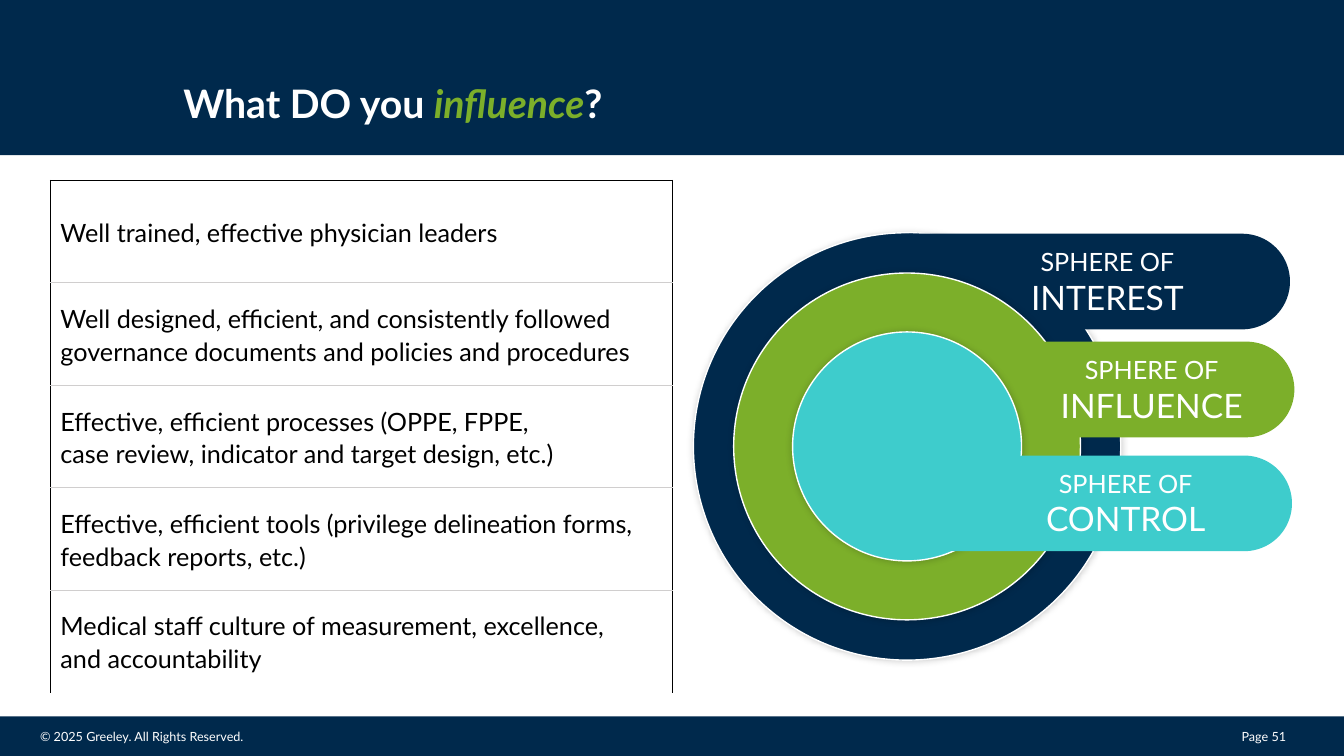
from lxml.etree import SubElement
from pptx import Presentation
from pptx.dml.color import RGBColor
from pptx.enum.shapes import MSO_SHAPE
from pptx.enum.text import MSO_ANCHOR, PP_ALIGN
from pptx.oxml import parse_xml
from pptx.oxml.ns import nsdecls, qn
from pptx.util import Cm, Pt

NAVY, GREEN, TEAL = "00294C", "7CAF2A", "3ECCCC"
WHITE, BLACK, GREY = "FFFFFF", "000000", "D0CECE"
FONT = "Lato"
WIDTH, HEIGHT = 33.87, 19.05

TITLE = [
    ("What DO you ", WHITE, False),
    ("influence", GREEN, True),
    ("?", WHITE, False),
]
FOOTERS = [
    ("© 2025 Greeley. All Rights Reserved.", 0.76, 11.38),
    ("Page 51", 31.04, 2.67),
]
EXAMPLES = [
    "Well trained, effective physician leaders",
    "Well designed, efficient, and consistently followed governance documents and policies and procedures",
    "Effective, efficient processes (OPPE, FPPE, \vcase review, indicator and target design, etc.)",
    "Effective, efficient tools (privilege delineation forms, feedback reports, etc.)",
    "Medical staff culture of measurement, excellence, \vand accountability",
]
SPHERES = [
    ("INTEREST", NAVY, 10.77, (21.74, 5.89, 10.77), 1.57),
    ("INFLUENCE", GREEN, 8.74, (24.16, 8.61, 8.46), 1.27),
    ("CONTROL", TEAL, 5.77, (22.91, 11.48, 9.65), 1.27),
]
CENTER_X, CENTER_Y = 22.86, 11.25
PILL_HEIGHT = 2.41
TABLE_BOX = (1.27, 4.55, 15.67, 12.9)


def color(value):
    return RGBColor.from_string(value)


def set_all(target, values):
    for name, value in values.items():
        setattr(target, name, value)


def format_run(run, size, fill, **extra):
    set_all(run.font, {"name": FONT, "size": Pt(size), **extra})
    run.font.color.rgb = color(fill)


def add_run(paragraph, text, size, fill, **extra):
    run = paragraph.add_run()
    run.text = text
    format_run(run, size, fill, **extra)


def add_block(slide, kind, box, fill, line=None):
    shape = slide.shapes.add_shape(kind, *map(Cm, box))
    shape.shadow.inherit = False
    shape.fill.solid()
    shape.fill.fore_color.rgb = color(fill)
    if line:
        shape.line.color.rgb = color(line)
        shape.line.width = Pt(1)
    else:
        shape.line.fill.background()
    return shape


def add_text_box(slide, box, **frame_format):
    frame = slide.shapes.add_textbox(*map(Cm, box)).text_frame
    set_all(frame, {"word_wrap": True, **frame_format})
    return frame.paragraphs[0]


def add_glow_shadow(shape):
    effects = shape._element.spPr.find(qn("a:effectLst"))
    shadow = SubElement(effects, qn("a:outerShdw"), blurRad=str(Pt(5)), dist="0", dir="0")
    tone = SubElement(shadow, qn("a:srgbClr"), val=BLACK)
    SubElement(tone, qn("a:alpha"), val="20000")


def set_borders(cell, borders):
    properties = cell._tc.get_or_add_tcPr()
    for index, (side, border) in enumerate(borders.items()):
        fill, width = border or (None, 0)
        paint = f'<a:solidFill><a:srgbClr val="{fill}"/></a:solidFill>' if fill else "<a:noFill/>"
        xml = f'<a:ln{side} {nsdecls("a")} w="{Pt(width)}">{paint}</a:ln{side}>'
        properties.insert(index, parse_xml(xml))


def add_sphere(slide, name, fill, diameter, pill_place, indent):
    corner = (CENTER_X - diameter / 2, CENTER_Y - diameter / 2)
    circle = add_block(slide, MSO_SHAPE.OVAL, (*corner, diameter, diameter), fill, WHITE)
    add_glow_shadow(circle)
    pill = add_block(slide, MSO_SHAPE.ROUNDED_RECTANGLE, (*pill_place, PILL_HEIGHT), fill)
    pill.adjustments[0] = 0.5
    frame = pill.text_frame
    set_all(frame, {"word_wrap": True, "vertical_anchor": MSO_ANCHOR.MIDDLE})
    for paragraph, text, size in (
        (frame.paragraphs[0], "SPHERE OF", 18),
        (frame.add_paragraph(), name, 24),
    ):
        paragraph.alignment = PP_ALIGN.CENTER
        paragraph._p.get_or_add_pPr().set("marL", str(Cm(indent)))
        add_run(paragraph, text, size, WHITE)


def add_examples(slide):
    table = slide.shapes.add_table(len(EXAMPLES), 1, *map(Cm, TABLE_BOX)).table
    set_all(table, {"first_row": False, "horz_banding": False})
    last = len(EXAMPLES) - 1
    outer, inner = (BLACK, 1), (GREY, 0.75)
    for index, text in enumerate(EXAMPLES):
        cell = table.cell(index, 0)
        cell.vertical_anchor = MSO_ANCHOR.MIDDLE
        cell.fill.background()
        set_borders(cell, {
            "L": outer,
            "R": outer,
            "T": inner if index else outer,
            "B": inner if index < last else None,
        })
        paragraph = cell.text_frame.paragraphs[0]
        paragraph.text = text
        set_all(paragraph, {"line_spacing": 1.08, "space_after": Pt(6)})
        for run in paragraph.runs:
            format_run(run, 18, BLACK)


def main():
    presentation = Presentation()
    set_all(presentation, {"slide_width": Cm(WIDTH), "slide_height": Cm(HEIGHT)})
    slide = presentation.slides.add_slide(presentation.slide_layouts[6])

    add_block(slide, MSO_SHAPE.RECTANGLE, (0, 18.05, WIDTH, 1), NAVY)
    for text, left, width in FOOTERS:
        add_run(add_text_box(slide, (left, 18.24, width, 0.65)), text, 9, WHITE)
    add_block(slide, MSO_SHAPE.RECTANGLE, (0, 0, WIDTH, 3.91), NAVY)

    for sphere in SPHERES:
        add_sphere(slide, *sphere)

    margins = {f"margin_{side}": 0 for side in ("left", "top", "right", "bottom")}
    title = add_text_box(slide, (4.62, 0, 28.47, 3.18), vertical_anchor=MSO_ANCHOR.BOTTOM, **margins)
    title.line_spacing = 1.08
    for text, fill, italic in TITLE:
        add_run(title, text, 28, fill, bold=True, italic=italic)

    add_examples(slide)
    presentation.save("out.pptx")


if __name__ == "__main__":
    main()
